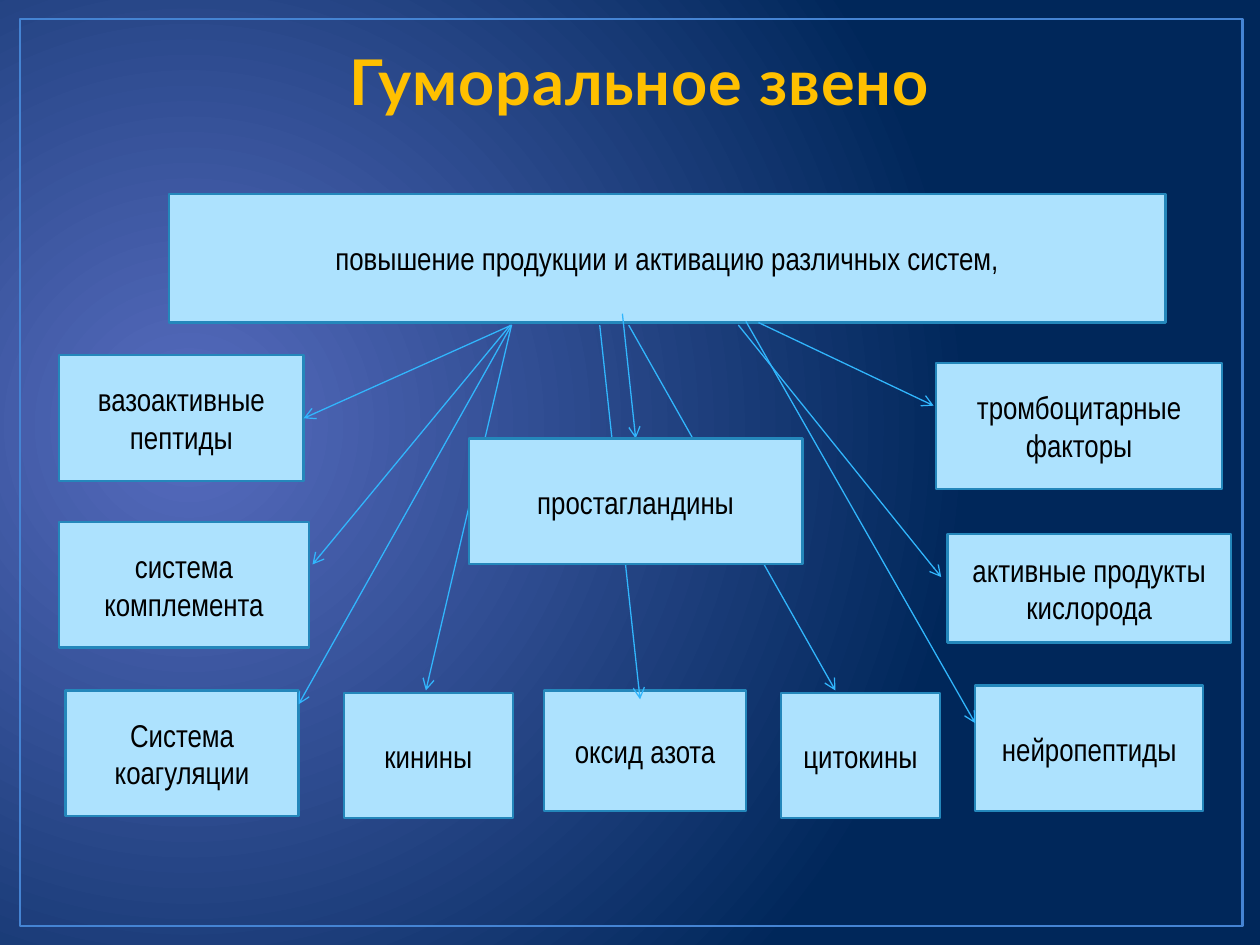
from lxml.etree import SubElement
from pptx import Presentation
from pptx.dml.color import RGBColor
from pptx.enum.shapes import MSO_CONNECTOR, MSO_SHAPE
from pptx.enum.text import MSO_ANCHOR, PP_ALIGN
from pptx.oxml import parse_xml
from pptx.oxml.ns import nsdecls, qn
from pptx.util import Emu, Pt

EMU_PER_PX = 9144
GLOW = RGBColor(0x57, 0x6C, 0xBF)
NAVY = RGBColor(0x00, 0x27, 0x5A)
FRAME = RGBColor(0x45, 0x84, 0xD3)
GOLD = RGBColor(0xFF, 0xC0, 0x00)
OUTLINE = RGBColor(0x01, 0x62, 0x96)
PALE = RGBColor(0xAD, 0xE2, 0xFE)
EDGE = RGBColor(0x24, 0x87, 0xBB)
ARROW = RGBColor(0x31, 0xB6, 0xFD)
BLACK = RGBColor(0x00, 0x00, 0x00)

BOXES = [
    ("цитокины", 620, 550, 126, 99),
    ("кинины", 273, 550, 134, 99),
    ("активные продукты кислорода", 752, 424, 225, 86),
    ("Система коагуляции", 52, 548, 185, 100),
    ("система комплемента", 47, 414, 198, 100),
    ("нейропептиды", 774, 544, 181, 100),
    ("повышение продукции и активацию различных систем,", 134, 154, 791, 102),
    ("оксид азота", 432, 548, 160, 96),
    ("тромбоцитарные факторы", 743, 288, 227, 100),
]
ARROWS = [
    (405, 258, 248, 448),
    (406, 258, 237, 559),
    (406, 258, 338, 548),
    (476, 258, 508, 555),
    (499, 258, 663, 548),
    (602, 256, 741, 322),
    (586, 258, 747, 458),
    (592, 255, 774, 574),
]


def px(*values):
    """Turn px lengths into EMU."""
    return [Emu(v * EMU_PER_PX) for v in values]


class Deck:
    """Holds the style and the current slide."""

    def __init__(self, prs):
        self.font, self.size = "Arial Narrow", Pt(18)
        self.s = prs.slides.add_slide(prs.slide_layouts[6])

    def background(self, inner, outer):
        """Fill the slide with a circular gradient."""
        fill = self.s.background.fill
        fill.gradient()
        for stop, color in zip(fill.gradient_stops, (inner, outer)):
            stop.color.rgb = color
        grad = next(self.s._element.iter(qn("a:gradFill")))
        for lin in grad.findall(qn("a:lin")):
            grad.remove(lin)
        circle = SubElement(grad, qn("a:path"), path="circle")
        SubElement(circle, qn("a:fillToRect"), l="15000", t="50000", r="85000", b="60000")

    def rect(self, x, y, w, h, line, width, fill=None):
        """Draw a rectangle."""
        sp = self.s.shapes.add_shape(MSO_SHAPE.RECTANGLE, *px(x, y, w, h))
        sp.shadow.inherit = False
        if fill is None:
            sp.fill.background()
        else:
            sp.fill.solid()
            sp.fill.fore_color.rgb = fill
        sp.line.color.rgb = line
        sp.line.width = Pt(width)
        return sp

    def text(self, sp, text, anchor, font, size, color):
        """Write one centred paragraph into a shape."""
        tf = sp.text_frame
        tf.word_wrap = True
        tf.vertical_anchor = anchor
        tf.text = text
        p = tf.paragraphs[0]
        p.alignment = PP_ALIGN.CENTER
        r = p.runs[0]
        r.font.name, r.font.size = font, size
        r.font.color.rgb = color
        return r

    def title(self, text, x, y, w, h):
        """Add the outlined title."""
        sp = self.s.shapes.add_textbox(*px(x, y, w, h))
        r = self.text(sp, text, MSO_ANCHOR.BOTTOM, "Lato", Pt(36), GOLD)
        r.font.bold = True
        rpr = r.font._element
        rpr.set("spc", "50")
        rpr.insert(0, parse_xml(
            f'<a:ln {nsdecls("a")} w="{Pt(1.05)}"><a:solidFill>'
            f'<a:srgbClr val="{OUTLINE}"/></a:solidFill></a:ln>'))

    def box(self, text, x, y, w, h):
        """Add a labelled box."""
        sp = self.rect(x, y, w, h, EDGE, 1.25, PALE)
        self.text(sp, text, MSO_ANCHOR.MIDDLE, self.font, self.size, BLACK)
        return sp

    def arrow(self, x1, y1, x2, y2):
        """Add an arrow pointing at its second end."""
        c = self.s.shapes.add_connector(MSO_CONNECTOR.STRAIGHT, *px(x1, y1, x2, y2))
        c.line.color.rgb = ARROW
        c.line.width = Pt(0.75)
        SubElement(c.line._get_or_add_ln(), qn("a:tailEnd"), type="arrow")
        SubElement(c._element.spPr, qn("a:effectLst"))
        return c


def main():
    prs = Presentation()
    prs.slide_width, prs.slide_height = px(1000, 750)
    deck = Deck(prs)
    deck.background(GLOW, NAVY)
    deck.rect(16, 15, 970, 720, FRAME, 1.5)
    deck.title("Гуморальное звено", 50, 30, 915, 69)
    for box in BOXES:
        deck.box(*box)
    peptides = deck.box("вазоактивные пептиды", 47, 282, 194, 100)
    deck.arrow(406, 258, 241, 332).end_connect(peptides, 3)
    for ends in ARROWS:
        deck.arrow(*ends)
    to_center = deck.arrow(494, 249, 505, 348)
    center = deck.box("простагландины", 372, 348, 265, 100)
    to_center.end_connect(center, 0)
    prs.save("out.pptx")


if __name__ == "__main__":
    main()
